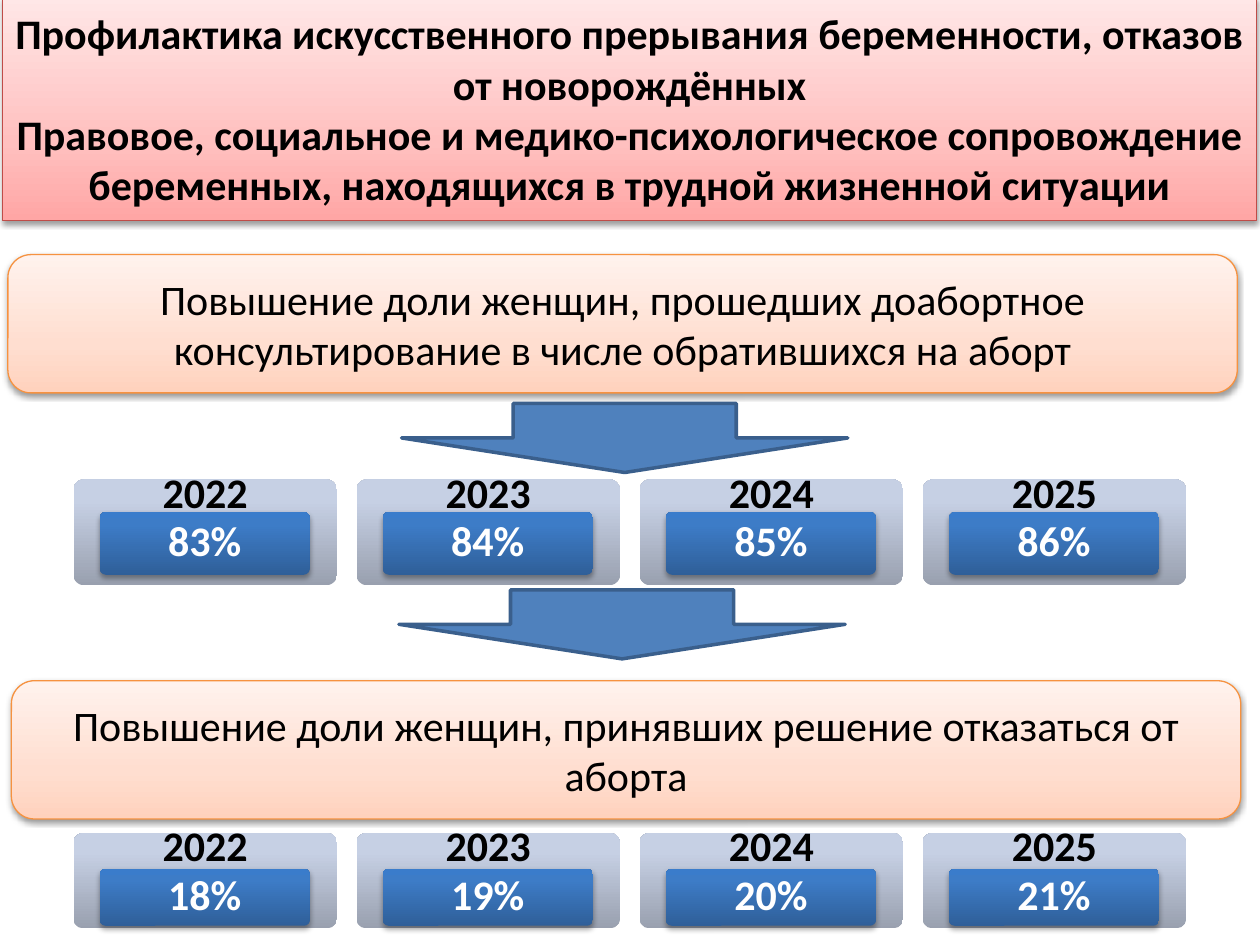
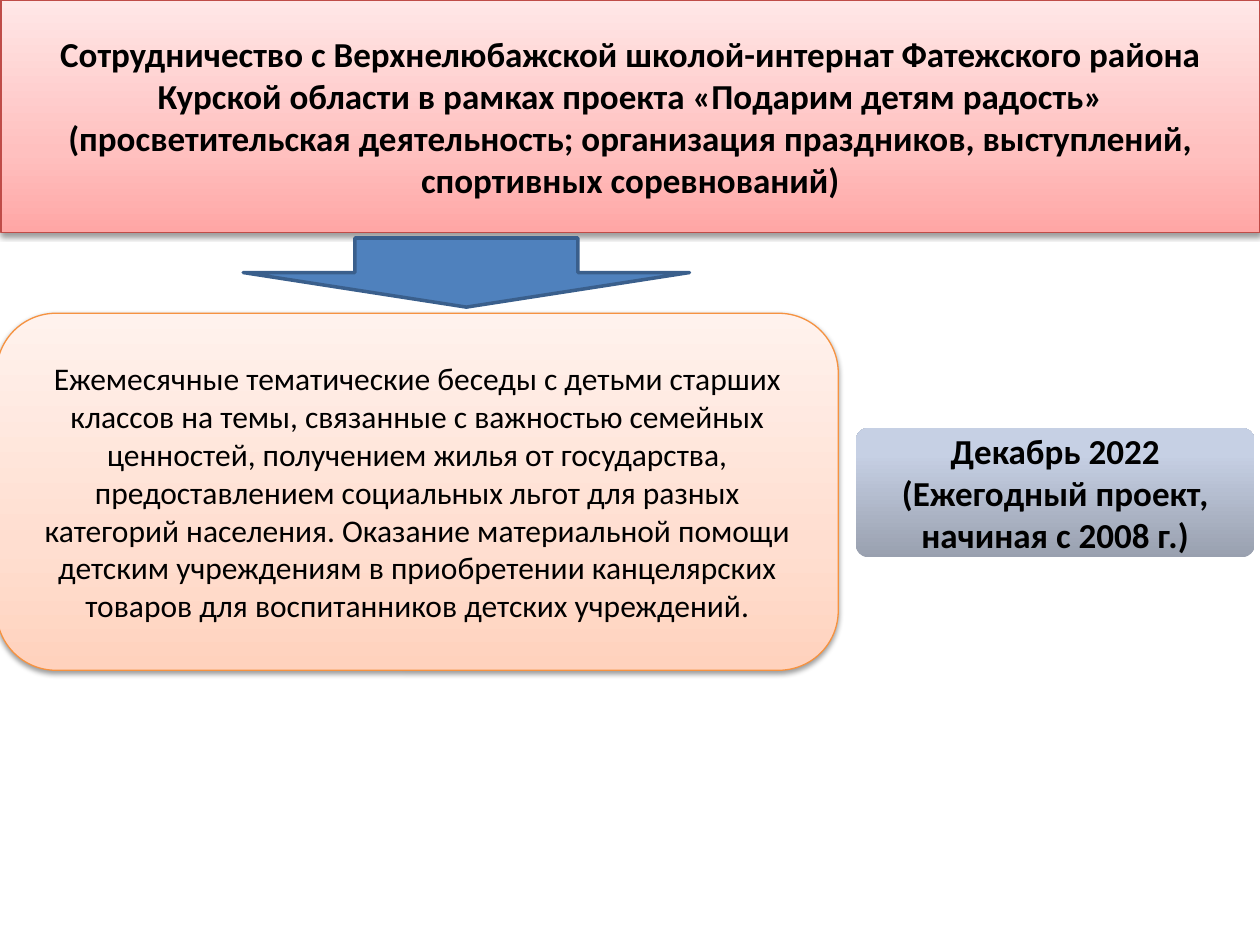
from lxml.etree import SubElement
from pptx import Presentation
from pptx.dml.color import RGBColor
from pptx.enum.shapes import MSO_SHAPE
from pptx.enum.text import MSO_ANCHOR, MSO_AUTO_SIZE, PP_ALIGN
from pptx.oxml.ns import qn
from pptx.util import Pt

FONT = "Calibri"
BLACK = RGBColor(0x00, 0x00, 0x00)
WHITE = RGBColor(0xFF, 0xFF, 0xFF)
RED_LINE = RGBColor(0xBF, 0x4C, 0x48)
ORANGE_LINE = RGBColor(0xF6, 0x92, 0x40)
ARROW_FILL = RGBColor(0x4F, 0x81, 0xBD)
ARROW_LINE = RGBColor(0x3A, 0x5F, 0x8C)

# Gradients run from the bottom edge (0 %) to the top edge (100 %).
PINK = ((0, RGBColor(0xFF, 0xA6, 0xA5)), (35, RGBColor(0xFF, 0xC0, 0xBF)),
        (100, RGBColor(0xFF, 0xE7, 0xE7)))
PEACH = ((0, RGBColor(0xFF, 0xD2, 0xBD)), (35, RGBColor(0xFF, 0xDE, 0xD0)),
         (100, RGBColor(0xFF, 0xF2, 0xED)))
GREY = ((0, RGBColor(0x99, 0xA0, 0xAF)), (80, RGBColor(0xC6, 0xD0, 0xE4)),
        (100, RGBColor(0xC7, 0xD1, 0xE5)))
BLUE = ((0, RGBColor(0x2F, 0x5F, 0x99)), (80, RGBColor(0x3D, 0x7C, 0xC7)),
        (100, RGBColor(0x3A, 0x7C, 0xCB)))

# Places are (left, top, width, height) in points.
PREVENTION = {
    "title": "Профилактика искусственного прерывания беременности, отказов "
             "от новорождённых\n"
             "Правовое, социальное и медико-психологическое сопровождение "
             "беременных, находящихся в трудной жизненной ситуации",
    "title_place": (1.5, -2, 716.5, 128),
    "title_size": 24,
    "goals": [
        ("Повышение доли женщин, прошедших доабортное консультирование "
         "в числе обратившихся на аборт", (4.5, 145.5, 702.5, 79), 24),
        ("Повышение доли женщин, принявших решение отказаться от аборта",
         (6.5, 389, 702.5, 79), 24),
    ],
    "arrows": [(229.5, 230.5), (228, 337)],
}
YEARS = ("2022", "2023", "2024", "2025")
TARGET_ROWS = [
    {"shares": ("83%", "84%", "85%", "86%"), "top": 274, "height": 60.5,
     "label_height": 18, "badge_top": 292.5, "badge_height": 36},
    {"shares": ("18%", "19%", "20%", "21%"), "top": 476, "height": 54.5,
     "label_height": 16.5, "badge_top": 496.5, "badge_height": 32.5},
]
COOPERATION = {
    "title": "Сотрудничество с Верхнелюбажской школой-интернат Фатежского района "
             "Курской области в рамках проекта «Подарим детям радость» "
             "(просветительская деятельность; организация праздников, "
             "выступлений, спортивных соревнований)",
    "title_place": (0.5, 0, 719.5, 133),
    "title_size": 20,
    "goals": [
        ("Ежемесячные тематические беседы с детьми старших классов на темы, "
         "связанные с важностью семейных ценностей, получением жилья от "
         "государства, предоставлением социальных льгот для разных категорий "
         "населения. Оказание материальной помощи детским учреждениям в "
         "приобретении канцелярских товаров для воспитанников детских "
         "учреждений.", (-2, 179, 481, 204), 18),
    ],
    "arrows": [(139, 136)],
}
PROJECT_DATE = "Декабрь 2022\n(Ежегодный проект, начиная с 2008 г.)"
PROJECT_DATE_PLACE = (489, 244.5, 228, 74)

ARROW_SIZE = (255, 39.5)
CARD_LEFT, CARD_WIDTH, CARD_STEP = 42, 150.5, 161.75
BADGE_INSET, BADGE_WIDTH = 15, 120


def points(values):
    return [Pt(value) for value in values]


def fill_gradient(shape, stops):
    shape.fill.gradient()
    shape.fill.gradient_angle = 90
    stop_list = shape._element.spPr.find(qn("a:gradFill")).find(qn("a:gsLst"))
    for stop in list(stop_list):
        stop_list.remove(stop)
    for percent, color in stops:
        stop = SubElement(stop_list, qn("a:gs"), pos=str(percent * 1000))
        SubElement(stop, qn("a:srgbClr"), val=str(color))


def drop_shadow(shape, opacity, distance):
    """Cast a soft black shadow straight down; opacity in percent."""
    effects = shape._element.spPr.find(qn("a:effectLst"))
    shadow = SubElement(effects, qn("a:outerShdw"), blurRad=str(Pt(3.1)),
                        dist=str(Pt(distance)), dir="5400000", rotWithShape="0")
    color = SubElement(shadow, qn("a:srgbClr"), val=str(BLACK))
    SubElement(color, qn("a:alpha"), val=str(opacity * 1000))


def style_shape(shape, gradient, line=None, opacity=0, distance=1.6):
    fill_gradient(shape, gradient)
    if line is None:
        shape.line.fill.background()
    else:
        shape.line.color.rgb = line
        shape.line.width = Pt(0.75)
    shape.shadow.inherit = False
    if opacity:
        drop_shadow(shape, opacity, distance)


def write_text(shape, text, size, color=BLACK, bold=False, spacing=None):
    frame = shape.text_frame
    frame.text = text
    frame.word_wrap = True
    frame.auto_size = MSO_AUTO_SIZE.NONE
    frame.vertical_anchor = MSO_ANCHOR.MIDDLE
    for para in frame.paragraphs:
        para.alignment = PP_ALIGN.CENTER
        para.line_spacing = spacing
        for span in para.runs:
            span.font.name = FONT
            span.font.size = Pt(size)
            span.font.bold = bold
            span.font.color.rgb = color


def add_rounded(page, place, gradient, corner=None, **style):
    box = page.shapes.add_shape(MSO_SHAPE.ROUNDED_RECTANGLE, *points(place))
    if corner is not None:
        box.adjustments[0] = corner
    style_shape(box, gradient, **style)
    return box


def add_arrow(page, left, top):
    arrow = page.shapes.add_shape(MSO_SHAPE.DOWN_ARROW,
                                  *points((left, top, *ARROW_SIZE)))
    arrow.fill.solid()
    arrow.fill.fore_color.rgb = ARROW_FILL
    arrow.line.color.rgb = ARROW_LINE
    arrow.line.width = Pt(2)
    arrow.shadow.inherit = False


def add_page(deck, content):
    """Add a slide with its title band, goal boxes and arrows."""
    page = deck.slides.add_slide(deck.slide_layouts[5])
    title = page.shapes.title
    title.left, title.top, title.width, title.height = points(content["title_place"])
    style_shape(title, PINK, line=RED_LINE, opacity=38)
    write_text(title, content["title"], content["title_size"], bold=True)
    for text, place, size in content["goals"]:
        goal = add_rounded(page, place, PEACH, line=ORANGE_LINE, opacity=38)
        write_text(goal, text, size)
    for left, top in content["arrows"]:
        add_arrow(page, left, top)
    return page


def add_target_row(page, row):
    for index, (year, share) in enumerate(zip(YEARS, row["shares"])):
        left = CARD_LEFT + index * CARD_STEP
        add_rounded(page, (left, row["top"], CARD_WIDTH, row["height"]), GREY, 0.1)
        label = page.shapes.add_textbox(
            *points((left, row["top"], CARD_WIDTH, row["label_height"])))
        write_text(label, year, 24, bold=True, spacing=0.9)
        badge = add_rounded(
            page, (left + BADGE_INSET, row["badge_top"], BADGE_WIDTH, row["badge_height"]),
            BLUE, 0.1, opacity=35, distance=1.8)
        write_text(badge, share, 24, WHITE, bold=True, spacing=0.9)


def main():
    deck = Presentation()
    deck.slide_width, deck.slide_height = Pt(720), Pt(540)

    page = add_page(deck, PREVENTION)
    for row in TARGET_ROWS:
        add_target_row(page, row)

    page = add_page(deck, COOPERATION)
    date_card = add_rounded(page, PROJECT_DATE_PLACE, GREY, 0.1)
    write_text(date_card, PROJECT_DATE, 20, bold=True)

    deck.save("out.pptx")


if __name__ == "__main__":
    main()
